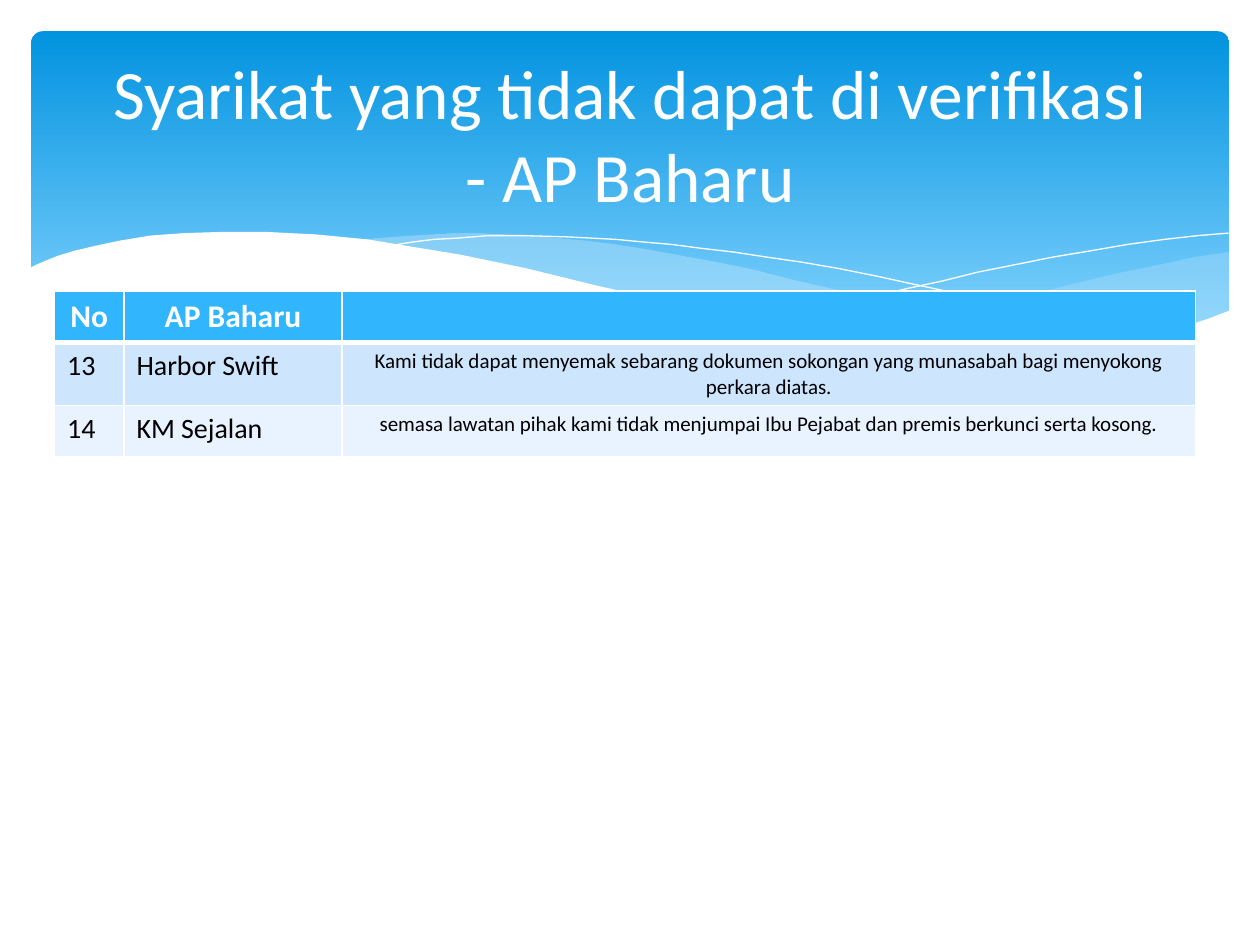
from lxml.etree import SubElement
from pptx import Presentation
from pptx.dml.color import RGBColor
from pptx.enum.shapes import MSO_SHAPE
from pptx.enum.text import MSO_ANCHOR, PP_ALIGN
from pptx.oxml import parse_xml
from pptx.oxml.ns import nsdecls, qn
from pptx.util import Cm, Pt

WHITE = RGBColor(0xFF, 0xFF, 0xFF)
BLACK = RGBColor(0x00, 0x00, 0x00)
DEEP_BLUE = RGBColor(0x02, 0x93, 0xE0)
SKY_BLUE = RGBColor(0x83, 0xD3, 0xFE)
WAVE_BLUE = RGBColor(0xC6, 0xE7, 0xFC)
HEADER_BLUE = RGBColor(0x31, 0xB6, 0xFD)
BAND_BLUES = [RGBColor(0xCE, 0xE5, 0xFE), RGBColor(0xE8, 0xF3, 0xFF)]
FONT = "Calibri"
WAVE_UNIT = Cm(0.0254)  # wave points are in hundredths of an inch


def add_wave(points, closed):
    builder = slide.shapes.build_freeform(*points[0], scale=WAVE_UNIT)
    builder.add_line_segments(points[1:], close=closed)
    wave = builder.convert_to_shape()
    wave.shadow.inherit = False
    return wave


def style_text(paragraph, size, color, align, bold=False):
    paragraph.alignment = align
    for run in paragraph.runs:
        run.font.name = FONT
        run.font.size = Pt(size)
        run.font.bold = bold
        run.font.color.rgb = color


prs = Presentation()
prs.slide_width = Cm(25.4)
prs.slide_height = Cm(19.05)
slide = prs.slides.add_slide(prs.slide_layouts[6])

# Gradient banner
banner = slide.shapes.add_shape(
    MSO_SHAPE.ROUNDED_RECTANGLE, Cm(0.63), Cm(0.63), Cm(24.15), Cm(6.86))
banner.adjustments[0] = 0.034
banner.shadow.inherit = False
banner.line.fill.background()
banner.fill.gradient()
banner.fill.gradient_angle = 270
for stop, color, position in zip(banner.fill.gradient_stops, (DEEP_BLUE, SKY_BLUE), (0, 0.9)):
    stop.color.rgb = color
    stop.position = position

# Translucent waves: points and opacity in percent
right_wave = [
    (975, 200), (948, 204), (921, 210), (891, 216), (861, 223), (805, 237), (753, 248),
    (706, 257), (661, 265), (691, 269), (719, 272), (745, 275), (769, 277), (803, 278),
    (835, 277), (863, 275), (889, 272), (913, 267), (935, 262), (949, 257), (963, 252),
    (976, 247), (976, 200)]
middle_wave = [
    (893, 273), (866, 269), (837, 265), (807, 260), (775, 254), (741, 247), (706, 240),
    (668, 231), (629, 222), (598, 214), (569, 208), (541, 203), (514, 198), (489, 194),
    (465, 191), (442, 189), (420, 187), (399, 186), (380, 185), (361, 185), (328, 187),
    (299, 189), (286, 191), (323, 196), (362, 203), (404, 211), (449, 222), (491, 232),
    (530, 240), (566, 248), (601, 255), (634, 261), (665, 266), (695, 270), (722, 274),
    (748, 276), (773, 277), (796, 278), (828, 278), (857, 277), (876, 275)]
for points, opacity in ((right_wave, 29), (middle_wave, 40)):
    wave = add_wave(points, True)
    wave.line.fill.background()
    wave.fill.solid()
    wave.fill.fore_color.rgb = WAVE_BLUE
    tint = wave.fill._xPr.find(".//" + qn("a:srgbClr"))
    SubElement(tint, qn("a:alpha"), val=str(opacity * 1000))

# Thin white curves
falling_curve = [
    (309, 195), (328, 192), (344, 190), (363, 189), (387, 187), (416, 187), (450, 188),
    (489, 190), (510, 192), (533, 194), (556, 197), (582, 200), (608, 204), (636, 208),
    (665, 213), (695, 219), (727, 226), (760, 233), (795, 241), (831, 251), (869, 261),
    (907, 272)]
rising_curve = [
    (613, 257), (653, 246), (695, 235), (720, 229), (748, 223), (776, 216), (806, 210),
    (836, 204), (866, 199), (895, 194), (924, 190), (951, 187), (975, 185)]
for points in (falling_curve, rising_curve):
    curve = add_wave(points, False)
    curve.fill.background()
    curve.line.color.rgb = WHITE
    curve.line.width = Pt(0)

# White wave that cuts off the bottom of the banner
page_edge = add_wave([
    (977, 246), (959, 253), (940, 259), (920, 265), (899, 269), (875, 273), (850, 275),
    (823, 277), (809, 277), (778, 276), (744, 274), (708, 270), (668, 265), (626, 258),
    (579, 250), (529, 239), (475, 227), (418, 213), (365, 202), (316, 194), (292, 190),
    (271, 188), (250, 186), (230, 185), (211, 184), (177, 184), (146, 185), (119, 187),
    (95, 191), (76, 195), (59, 199), (46, 203), (36, 207), (29, 210), (23, 213),
    (23, 329), (977, 329)], True)
page_edge.line.fill.background()
page_edge.fill.solid()
page_edge.fill.fore_color.rgb = WHITE

# Title
title = slide.shapes.add_textbox(Cm(1.27), Cm(0.94), Cm(22.86), Cm(3.48)).text_frame
title.word_wrap = True
title.vertical_anchor = MSO_ANCHOR.MIDDLE
heading = title.paragraphs[0]
heading.add_run().text = "Syarikat yang tidak dapat di verifikasi"
heading.add_line_break()
heading.add_run().text = "- AP Baharu"
style_text(heading, 39.6, WHITE, PP_ALIGN.CENTER)

# Company table
companies = [
    ("No", "AP Baharu", ""),
    ("13", "Harbor Swift", "Kami tidak dapat menyemak sebarang dokumen sokongan yang "
                           "munasabah bagi menyokong perkara diatas."),
    ("14", "KM Sejalan", "semasa lawatan pihak kami tidak menjumpai Ibu Pejabat dan "
                         "premis berkunci serta kosong."),
]
column_widths = [Cm(1.4), Cm(4.4), Cm(17.2)]
row_height = Cm(1.03)
table = slide.shapes.add_table(
    len(companies), len(column_widths), Cm(1.1), Cm(5.87),
    sum(column_widths), row_height * len(companies)).table
for column, width in zip(table.columns, column_widths):
    column.width = width

for row_index, company in enumerate(companies):
    table.rows[row_index].height = row_height
    is_header = row_index == 0
    for column_index, wording in enumerate(company):
        cell = table.cell(row_index, column_index)
        cell.text_frame.text = wording
        is_remark = column_index == 2
        size = 18 if is_header else 12 if is_remark else 16
        align = PP_ALIGN.CENTER if is_header or is_remark else PP_ALIGN.LEFT
        style_text(cell.text_frame.paragraphs[0], size,
                   WHITE if is_header else BLACK, align, is_header)
        cell.fill.solid()
        cell.fill.fore_color.rgb = HEADER_BLUE if is_header else BAND_BLUES[row_index - 1]

        # White borders, thicker under the header
        border_widths = {"lnL": 1, "lnR": 1, "lnT": 3 if row_index == 1 else 1,
                         "lnB": 3 if is_header else 1}
        for order, (side, width) in enumerate(border_widths.items()):
            cell._tc.get_or_add_tcPr().insert(order, parse_xml(
                f'<a:{side} {nsdecls("a")} w="{Pt(width)}"><a:solidFill>'
                f'<a:srgbClr val="{WHITE}"/></a:solidFill></a:{side}>'))

prs.save("out.pptx")
